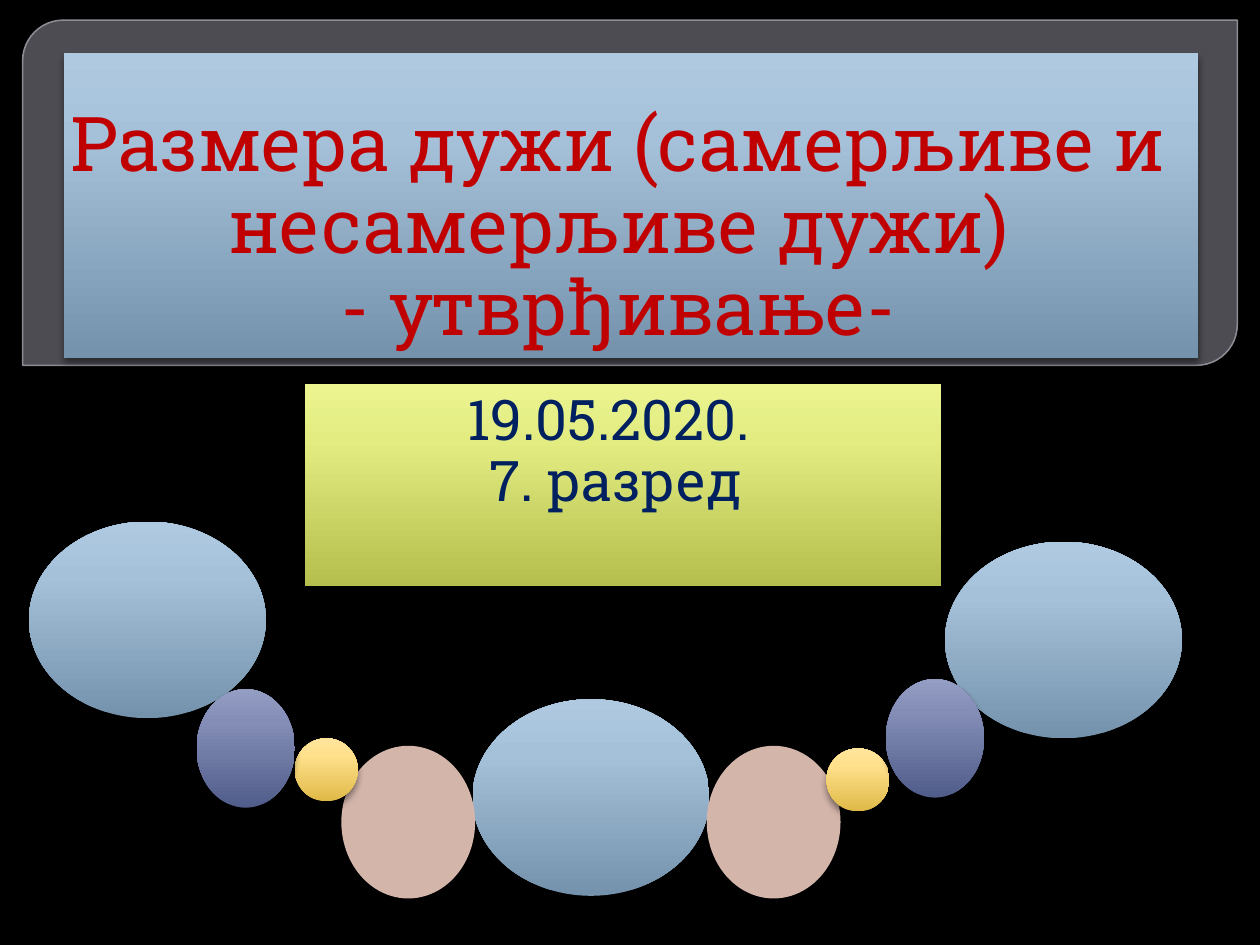
from copy import deepcopy
from dataclasses import dataclass

from lxml import etree
from pptx import Presentation
from pptx import util as u
from pptx.dml.color import RGBColor
from pptx.enum import shapes, text
from pptx.oxml.ns import qn


@dataclass(frozen=True)
class Theme:
    font: str = "Roboto Slab"
    title_size: float = 43.2
    subtitle_size: float = 32
    background: str = "000000"
    frame: str = "76767E"
    frame_line: str = "8C8C94"
    title: str = "C00000"
    subtitle: str = "002060"
    rose: str = "D4B5AA"
    # Gradients run from bottom to top
    blue: tuple = ("7492AB", "A5C1DA", "AFC9E1")
    lime: tuple = ("B5BF4D", "E2EC81", "EBF48F")
    gold: tuple = ("DFB947", "FFE08B", "FFE49D")
    violet: tuple = ("505C8A", "838DB6", "949DC2")


THEME = Theme()
STOPS = (0, 0.72, 1)


def rgb(value):
    return RGBColor.from_string(value)


def place(shape, box):
    shape.left, shape.top, shape.width, shape.height = map(u.Inches, box)


def set_alpha(fill_element, percent):
    color = fill_element.find(".//" + qn("a:srgbClr"))
    etree.SubElement(color, qn("a:alpha"), val=str(percent * 1000))


def add_glossy_style(shape, colors):
    """Three-stop vertical gradient with a soft shadow below."""
    shape.fill.gradient()
    shape.fill.gradient_angle = 90
    properties = shape.element.spPr
    stop_list = properties.find(".//" + qn("a:gsLst"))
    stop_list.append(deepcopy(stop_list[-1]))
    for stop, position, color in zip(shape.fill.gradient_stops, STOPS, colors):
        stop.position = position
        stop.color.rgb = rgb(color)
    shape.line.fill.background()

    shape.shadow.inherit = False
    effects = properties.find(qn("a:effectLst"))
    shadow = etree.SubElement(
        effects, qn("a:outerShdw"), blurRad=str(u.Pt(4)), dist=str(u.Pt(3)),
        dir="5400000", rotWithShape="0")
    etree.SubElement(shadow, qn("a:srgbClr"), val="000000")
    set_alpha(shadow, 43)


def write_text(shape, lines, *, size, color, anchor, right_inset, spacing):
    frame = shape.text_frame
    frame.word_wrap = True
    frame.auto_size = text.MSO_AUTO_SIZE.NONE
    frame.vertical_anchor = anchor
    frame.margin_left = frame.margin_top = frame.margin_bottom = u.Inches(0.05)
    frame.margin_right = u.Inches(right_inset)
    frame.text = lines
    for paragraph in frame.paragraphs:
        paragraph.alignment = text.PP_ALIGN.CENTER
        paragraph.line_spacing = spacing
        paragraph.space_before = u.Pt(0)
        for run in paragraph.runs:
            run.font.name = THEME.font
            run.font.size = u.Pt(size)
            run.font.color.rgb = rgb(color)


def add_frame(slide, box):
    frame = slide.shapes.add_shape(
        shapes.MSO_SHAPE.ROUND_2_DIAG_RECTANGLE, *map(u.Inches, box))
    frame.adjustments[0] = 0.118
    frame.fill.solid()
    frame.fill.fore_color.rgb = rgb(THEME.frame)
    set_alpha(frame.element.spPr.find(qn("a:solidFill")), 65)
    frame.line.color.rgb = rgb(THEME.frame_line)
    frame.line.width = u.Pt(0.87)
    frame.shadow.inherit = False
    # The frame lies behind the placeholders
    slide.shapes._spTree.insert(2, frame.element)


def fill_title(slide, box):
    title = slide.shapes.title
    place(title, box)
    add_glossy_style(title, THEME.blue)
    write_text(title, "Размера дужи (самерљиве и несамерљиве дужи)\v- утврђивање-",
               size=THEME.title_size, color=THEME.title,
               anchor=text.MSO_ANCHOR.BOTTOM, right_inset=0.25, spacing=0.9)


def fill_subtitle(slide, box):
    subtitle = slide.placeholders[1]
    place(subtitle, box)
    add_glossy_style(subtitle, THEME.lime)
    write_text(subtitle, "19.05.2020.\n 7. разред",
               size=THEME.subtitle_size, color=THEME.subtitle,
               anchor=text.MSO_ANCHOR.TOP, right_inset=0.27, spacing=0.92)


def add_beads(slide, left, top):
    """String of beads; every position is relative to the left and top given."""
    kinds = (
        (THEME.blue, (1.88, 1.56), ((3.52, 1.41), (0, 0), (7.27, 0.16))),
        (THEME.rose, (1.02, 1.17), ((2.5, 1.8), (5.4, 1.8))),
        (THEME.gold, (0.5, 0.5), ((6.33, 1.8), (2.11, 1.72))),
        (THEME.violet, (0.78, 0.94), ((6.8, 1.25), (1.33, 1.33))),
    )
    for color, size, positions in kinds:
        for x, y in positions:
            bead = slide.shapes.add_shape(
                shapes.MSO_SHAPE.FLOWCHART_CONNECTOR,
                *map(u.Inches, (left + x, top + y, *size)))
            if isinstance(color, tuple):
                add_glossy_style(bead, color)
                continue
            bead.fill.solid()
            bead.fill.fore_color.rgb = rgb(color)
            bead.line.color.rgb = rgb(color)
            bead.line.width = u.Pt(3)
            bead.shadow.inherit = False


def main():
    presentation = Presentation()
    presentation.slide_width = u.Inches(10)
    presentation.slide_height = u.Inches(7.5)
    slide = presentation.slides.add_slide(presentation.slide_layouts[0])
    slide.background.fill.solid()
    slide.background.fill.fore_color.rgb = rgb(THEME.background)

    add_frame(slide, (0.18, 0.16, 9.64, 2.74))
    fill_title(slide, (0.51, 0.42, 9, 2.42))
    fill_subtitle(slide, (2.42, 3.05, 5.05, 1.6))
    add_beads(slide, 0.23, 4.14)
    presentation.save("out.pptx")


if __name__ == "__main__":
    main()
